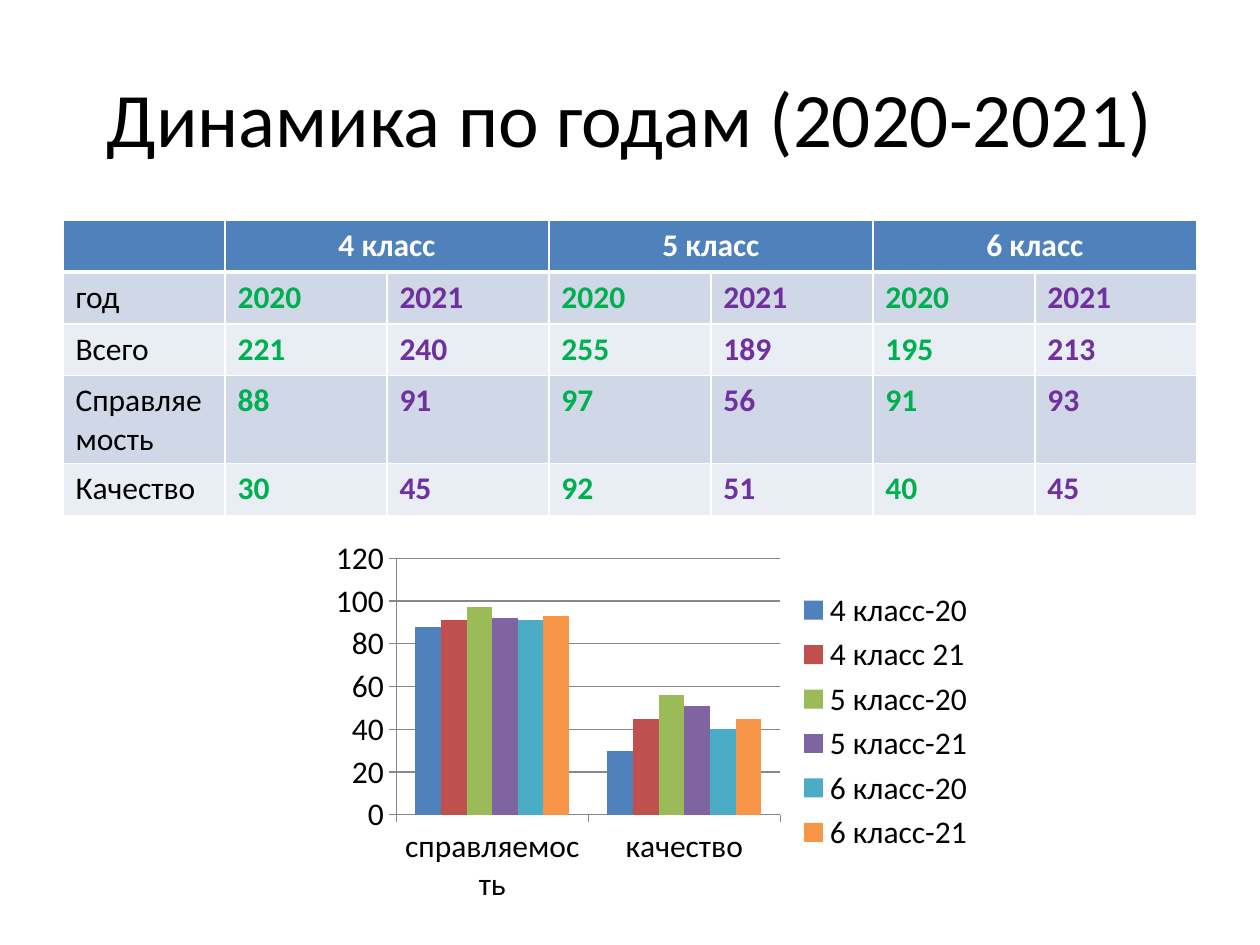
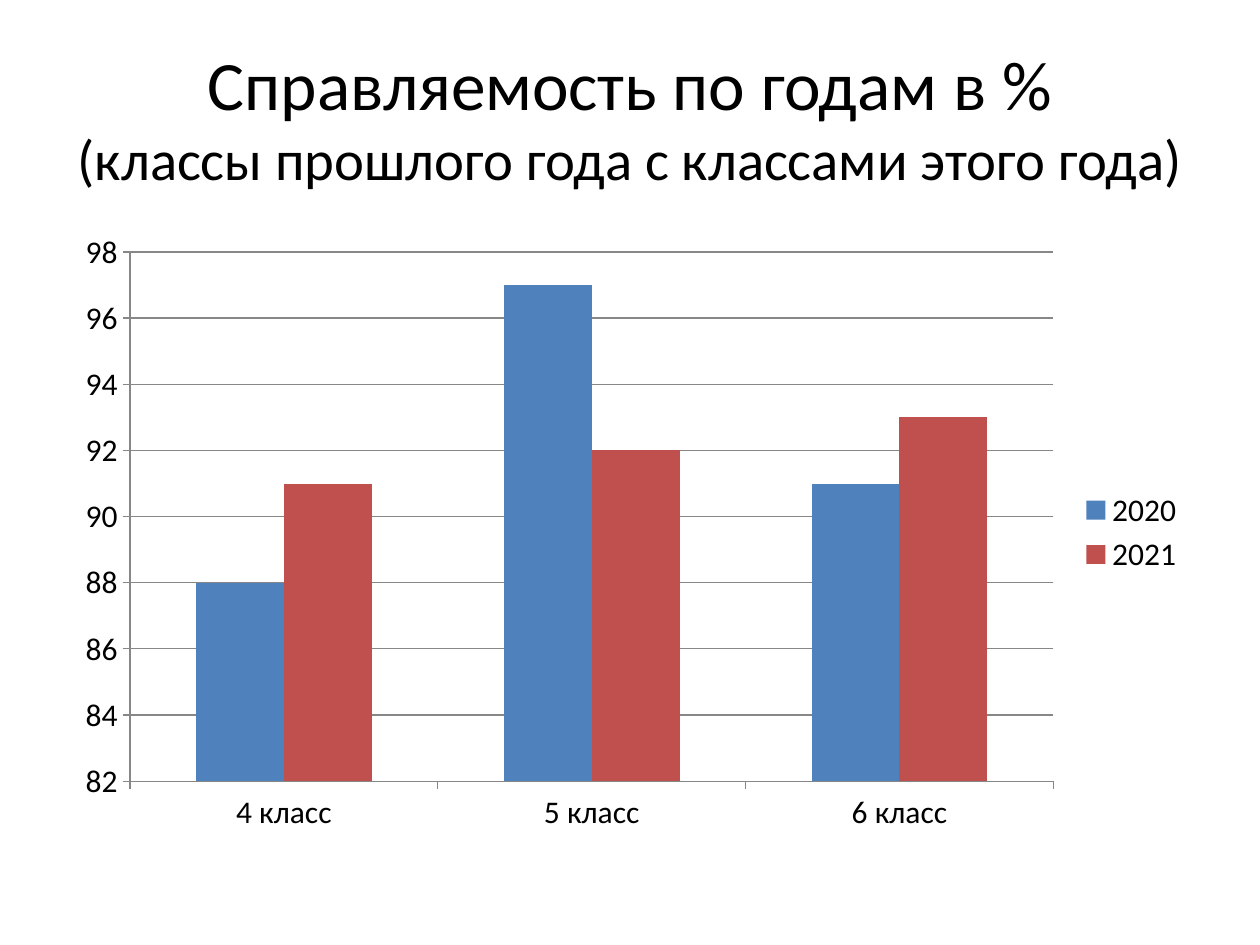
"""Builds two slides comparing school results for 2020 and 2021."""
import pptx
import pptx.chart.data
import pptx.dml.color
import pptx.enum.chart
import pptx.enum.text
import pptx.oxml
import pptx.oxml.ns
import pptx.util

COLOURS = {
    "text": "000000", "white": "FFFFFF", "header": "4F81BD",
    "band_dark": "D0D8E8", "band_light": "E9EDF4", "grid": "878787",
    "2020": "00B050", "2021": "7030A0",
}
SERIES_COLOURS = ["4F81BD", "C0504D", "9BBB59", "8064A2", "4BACC6", "F79646"]
FONT = "Calibri"
WIDTH, HEIGHT = 10, 7.5
MARGIN = 0.05 * WIDTH
CONTENT_WIDTH = WIDTH - 2 * MARGIN
TITLE_TOP, TITLE_HEIGHT = 0.04 * HEIGHT, HEIGHT / 6
CONTENT_TOP = 1.75
ROW_HEIGHT = 0.41

CLASSES = ["4 класс", "5 класс", "6 класс"]
YEARS = ["2020", "2021"]
RESULT_ROWS = [
    ("год", YEARS * len(CLASSES)),
    ("Всего", [221, 240, 255, 189, 195, 213]),
    ("Справляемость", [88, 91, 97, 56, 91, 93]),
    ("Качество", [30, 45, 92, 51, 40, 45]),
]

SLIDES = [
    {
        "title": [("Динамика по годам (2020-2021)", 44)],
        "table": RESULT_ROWS,
        "chart": {
            "box": (2.56, 4.22, 5.28, 3.01),
            "scale": (0, 120, 20),
            "categories": ["справляемость", "качество"],
            "series": [
                ("4 класс-20", (88, 30)), ("4 класс 21", (91, 45)),
                ("5 класс-20", (97, 56)), ("5 класс-21", (92, 51)),
                ("6 класс-20", (91, 40)), ("6 класс-21", (93, 45)),
            ],
        },
    },
    {
        "title": [("Справляемость по годам в %", 39.6),
                  ("(классы прошлого года с классами этого года)", 32.4)],
        "chart": {
            "box": (MARGIN, CONTENT_TOP, CONTENT_WIDTH, 0.66 * HEIGHT),
            "scale": (82, 98, 2),
            "categories": CLASSES,
            "series": [("2020", (88, 97, 91)), ("2021", (91, 92, 93))],
        },
    },
]


def rgb(name):
    return pptx.dml.color.RGBColor.from_string(COLOURS.get(name, name))


def inches(*lengths):
    return [pptx.util.Inches(length) for length in lengths]


def apply(target, values):
    for name, value in values.items():
        setattr(target, name, value)


def style_font(font, size, colour="text", bold=False):
    apply(font, {"name": FONT, "size": pptx.util.Pt(size), "bold": bold})
    font.color.rgb = rgb(colour)


def add_title(page, lines):
    box = page.shapes.add_textbox(
        *inches(MARGIN, TITLE_TOP, CONTENT_WIDTH, TITLE_HEIGHT))
    frame = box.text_frame
    apply(frame, {"word_wrap": True,
                  "vertical_anchor": pptx.enum.text.MSO_ANCHOR.MIDDLE})
    para = frame.paragraphs[0]
    para.alignment = pptx.enum.text.PP_ALIGN.CENTER
    for index, (text, size) in enumerate(lines):
        if index:
            para.add_line_break()
        span = para.add_run()
        span.text = text
        style_font(span.font, size)


def set_borders(cell, widths):
    properties = cell._tc.get_or_add_tcPr()
    for index, (side, points) in enumerate(widths.items()):
        line = pptx.oxml.parse_xml(
            f'<a:ln{side} {pptx.oxml.ns.nsdecls("a")} w="{pptx.util.Pt(points)}">'
            f'<a:solidFill><a:srgbClr val="{COLOURS["white"]}"/></a:solidFill>'
            f'</a:ln{side}>')
        properties.insert(index, line)


def fill_cell(cell, text, colour, bold, centred=False):
    para = cell.text_frame.paragraphs[0]
    if centred:
        para.alignment = pptx.enum.text.PP_ALIGN.CENTER
    span = para.add_run()
    span.text = str(text)
    style_font(span.font, 18, colour, bold)


def add_results_table(page, rows):
    row_count, column_count = len(rows) + 1, len(CLASSES) * len(YEARS) + 1
    table = page.shapes.add_table(
        row_count, column_count,
        *inches(MARGIN, CONTENT_TOP, CONTENT_WIDTH, row_count * ROW_HEIGHT)).table
    for row_index in range(row_count):
        band = "band_dark" if row_index % 2 else "band_light"
        for column in range(column_count):
            cell = table.cell(row_index, column)
            cell.fill.solid()
            cell.fill.fore_color.rgb = rgb(band if row_index else "header")
            set_borders(cell, {"L": 1, "R": 1, "T": 3 if row_index == 1 else 1,
                               "B": 1 if row_index else 3})
    for index, name in enumerate(CLASSES):
        column = 1 + index * len(YEARS)
        cell = table.cell(0, column)
        cell.merge(table.cell(0, column + len(YEARS) - 1))
        fill_cell(cell, name, "white", True, centred=True)
    for row_index, (label, values) in enumerate(rows, 1):
        fill_cell(table.cell(row_index, 0), label, "text", False)
        for index, value in enumerate(values):
            year = YEARS[index % len(YEARS)]
            fill_cell(table.cell(row_index, index + 1), value, year, True)


def style_line(line):
    line.color.rgb = rgb("grid")
    line.width = pptx.util.Pt(0.75)


def add_column_chart(page, content):
    data = pptx.chart.data.CategoryChartData()
    data.categories = content["categories"]
    for name, values in content["series"]:
        data.add_series(name, values)
    chart = page.shapes.add_chart(
        pptx.enum.chart.XL_CHART_TYPE.COLUMN_CLUSTERED,
        *inches(*content["box"]), data).chart
    style_font(chart.font, 18)
    apply(chart, {"has_title": False, "has_legend": True})
    apply(chart.legend, {
        "position": pptx.enum.chart.XL_LEGEND_POSITION.RIGHT,
        "include_in_layout": False})
    plot = chart.plots[0]
    apply(plot, {"gap_width": 150, "overlap": 0, "vary_by_categories": False})
    for series, colour in zip(plot.series, SERIES_COLOURS):
        series.format.fill.solid()
        series.format.fill.fore_color.rgb = rgb(colour)
    for axis in (chart.category_axis, chart.value_axis):
        axis.major_tick_mark = pptx.enum.chart.XL_TICK_MARK.OUTSIDE
        style_line(axis.format.line)
    low, high, step = content["scale"]
    apply(chart.value_axis, {"minimum_scale": low, "maximum_scale": high,
                             "major_unit": step, "has_major_gridlines": True})
    style_line(chart.value_axis.major_gridlines.format.line)


def main():
    deck = pptx.Presentation()
    apply(deck, {"slide_width": pptx.util.Inches(WIDTH),
                 "slide_height": pptx.util.Inches(HEIGHT)})
    for content in SLIDES:
        page = deck.slides.add_slide(deck.slide_layouts[6])
        page.background.fill.solid()
        page.background.fill.fore_color.rgb = rgb("white")
        add_title(page, content["title"])
        if "table" in content:
            add_results_table(page, content["table"])
        add_column_chart(page, content["chart"])
    deck.save("out.pptx")


if __name__ == "__main__":
    main()
